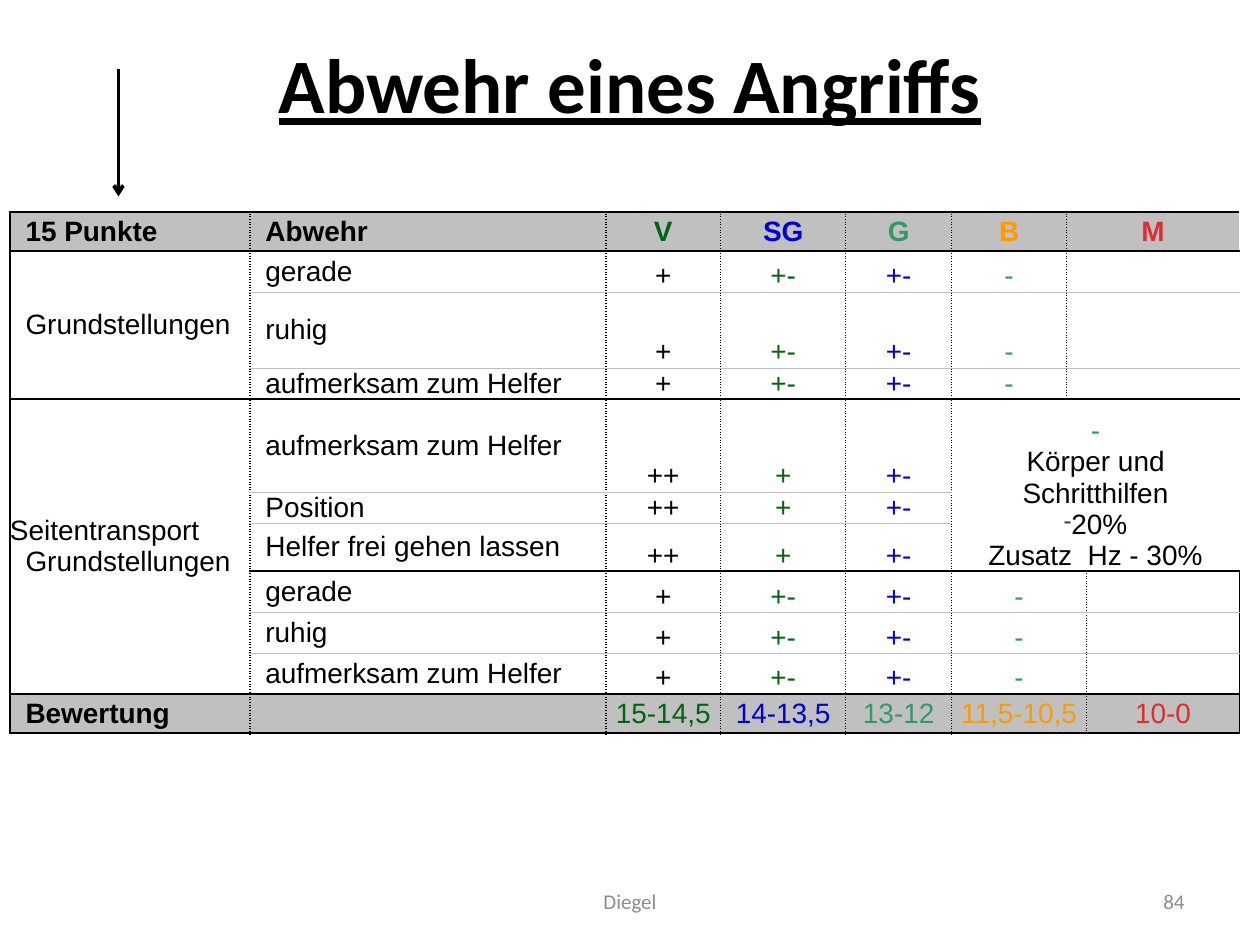
"""Builds the slide with the grading table for the defence exercise."""
from dataclasses import dataclass

from lxml.etree import SubElement
from pptx import Presentation
from pptx.dml.color import RGBColor as RGB
from pptx.enum.shapes import MSO_CONNECTOR as Conn
from pptx.enum.text import MSO_ANCHOR as Anchor, PP_ALIGN as Align
from pptx.oxml.ns import qn
from pptx.util import Pt


@dataclass(frozen=True)
class Theme:
    black: str = "000000"
    grey: str = "C0C0C0"
    muted: str = "8C8C8C"
    bullet: str = "414141"
    grades: tuple = ("006411", "0000D4", "339966", "FF9900", "DD2D32")
    table_font: str = "Arial"
    text_font: str = "Calibri"
    title_size: int = 44
    table_size: int = 16
    footer_size: int = 12


@dataclass(frozen=True)
class Line:
    text: str
    indent: float = 0
    bullet: str = ""
    color: str = ""


@dataclass(frozen=True)
class Cell:
    row: int
    col: int
    lines: tuple = ()
    color: str = "000000"
    align: Align = Align.CENTER
    anchor: Anchor = Anchor.BOTTOM
    bold: bool = False
    rows: int = 1
    cols: int = 1


@dataclass(frozen=True)
class Label:
    text: str
    box: tuple
    size: int
    color: str
    align: Align
    strong: bool = False


THEME = Theme()
INDENT = 8.9
COLS = (137.1, 203.4, 65.7, 71.4, 60.6, 65.7, 11.4, 87.4)
ROWS = (22.3, 23.4, 43.4, 17.7, 53.1, 17.7, 27.5, 23.4, 23.4, 23.4, 22.3)
SHADED = (0, 10)
GROUP_ENDS = (0, 3, 6, 9, 10)
SPLIT_ROW = 7
BASIC = ("+", "+-", "+-", "-")
ESCORT = ("++", "+", "+-")
CRITERIA = (
    ("gerade", BASIC),
    ("ruhig", BASIC),
    ("aufmerksam zum Helfer", BASIC),
    ("aufmerksam zum Helfer", ESCORT),
    ("Position", ESCORT),
    ("Helfer frei gehen lassen", ESCORT),
    ("gerade", BASIC),
    ("ruhig", BASIC),
    ("aufmerksam zum Helfer", BASIC),
)
HEADINGS = ("V", "SG", "G", "B", "M")
SCORES = ("15-14,5", "14-13,5", "13-12", "11,5-10,5", "10-0")
LABELS = (
    Label("Abwehr eines Angriffs", (0, 16.5, 720, 62), THEME.title_size,
          THEME.black, Align.CENTER, True),
    Label("84", (516, 500.5, 168, 28.5), THEME.footer_size, THEME.muted, Align.RIGHT),
    Label("Diegel", (246, 500.5, 228, 28.5), THEME.footer_size, THEME.muted, Align.CENTER),
)


def left_cell(row: int, col: int, *lines: Line, bold: bool = False, rows: int = 1) -> Cell:
    return Cell(row, col, lines, THEME.black, Align.LEFT, Anchor.MIDDLE, bold, rows)


def grade_place(row: int, index: int) -> tuple[int, int]:
    """Returns the first column and the column span of a grade."""
    if index < 3:
        return index + 2, 1
    if row < SPLIT_ROW:
        return (5, 1) if index == 3 else (6, 2)
    return (5, 2) if index == 3 else (7, 1)


def grade_cells(row: int, texts: tuple, colors: tuple, **style) -> list[Cell]:
    cells = []
    for i, (text, color) in enumerate(zip(texts, colors)):
        col, span = grade_place(row, i)
        lines = (Line(text),) if text else ()
        cells.append(Cell(row, col, lines, color, cols=span, **style))
    return cells


def table_cells() -> list[Cell]:
    cells = [
        left_cell(0, 0, Line("15 Punkte", INDENT), bold=True),
        left_cell(0, 1, Line("Abwehr", INDENT), bold=True),
        left_cell(1, 0, Line("Grundstellungen", INDENT), rows=3),
        left_cell(4, 0, Line("Seitentransport"), Line("Grundstellungen", INDENT), rows=6),
        Cell(4, 5, (Line("-", color=THEME.grades[2]), Line("Körper und Schritthilfen"),
                    Line("20%", bullet="-"), Line("Zusatz  Hz - 30%")), rows=3, cols=3),
        left_cell(10, 0, Line("Bewertung", INDENT), bold=True),
        left_cell(10, 1),
    ]
    cells += grade_cells(0, HEADINGS, THEME.grades, anchor=Anchor.MIDDLE, bold=True)
    cells += grade_cells(10, SCORES, THEME.grades, anchor=Anchor.MIDDLE)
    marks = (THEME.black, *THEME.grades[:3], THEME.black)
    for row, (name, values) in enumerate(CRITERIA, 1):
        cells.append(left_cell(row, 1, Line(name, INDENT)))
        texts = values if values is ESCORT else (*values, "")
        cells += grade_cells(row, texts, marks)
    return cells


def add_border(tc_pr, tag: str, color: str, width: float, dash: str) -> None:
    ln = SubElement(tc_pr, qn(f"a:{tag}"), w=str(Pt(width)))
    fill = SubElement(ln, qn("a:solidFill"))
    SubElement(fill, qn("a:srgbClr"), val=color)
    SubElement(ln, qn("a:prstDash"), val=dash)


def draw_borders(tc, row: int, col: int, cell: Cell) -> None:
    """Draws the outer edges of a cell block that touch this grid cell."""
    def rule(after: int) -> tuple:
        strong = after < 0 or after in GROUP_ENDS
        return (THEME.black, 1, "solid") if strong else (THEME.grey, 0.25, "solid")

    def upright(edge: int) -> tuple:
        return THEME.black, 1, "solid" if edge in (0, len(COLS)) else "sysDot"

    tc_pr = tc.get_or_add_tcPr()
    last_row, end_col = cell.row + cell.rows - 1, cell.col + cell.cols
    if col == cell.col:
        add_border(tc_pr, "lnL", *upright(col))
    if col + 1 == end_col:
        add_border(tc_pr, "lnR", *upright(end_col))
    if row == cell.row:
        add_border(tc_pr, "lnT", *rule(row - 1))
    if row == last_row:
        add_border(tc_pr, "lnB", *rule(last_row))


def write_line(p, line: Line, cell: Cell) -> None:
    p.alignment = cell.align
    p_pr = p._p.get_or_add_pPr()
    p_pr.set("marL", str(Pt(line.indent)))
    p_pr.set("indent", "0")
    if line.bullet:
        clr = SubElement(p_pr, qn("a:buClr"))
        SubElement(clr, qn("a:srgbClr"), val=THEME.bullet)
        SubElement(p_pr, qn("a:buSzPct"), val="81000")
        SubElement(p_pr, qn("a:buChar"), char=line.bullet)
    if line.text:
        p.add_run().text = line.text
    else:
        SubElement(p._p, qn("a:endParaRPr"), sz=str(THEME.table_size * 100))
    p.font.name, p.font.size, p.font.bold = THEME.table_font, Pt(THEME.table_size), cell.bold
    p.font.color.rgb = RGB.from_string(line.color or cell.color)


def draw_cell(table, cell: Cell) -> None:
    first = table.cell(cell.row, cell.col)
    if cell.rows * cell.cols > 1:
        first.merge(table.cell(cell.row + cell.rows - 1, cell.col + cell.cols - 1))
    for row in range(cell.row, cell.row + cell.rows):
        for col in range(cell.col, cell.col + cell.cols):
            part = table.cell(row, col)
            draw_borders(part._tc, row, col, cell)
            part.margin_left = part.margin_right = part.margin_top = part.margin_bottom = 0
            part.vertical_anchor = cell.anchor
            if row in SHADED:
                part.fill.solid()
                part.fill.fore_color.rgb = RGB.from_string(THEME.grey)
            else:
                part.fill.background()
            tf = part.text_frame
            lines = cell.lines if part._tc is first._tc else ()
            for i, line in enumerate(lines or (Line(""),)):
                write_line(tf.add_paragraph() if i else tf.paragraphs[0], line, cell)


def draw_table(s) -> None:
    table = s.shapes.add_table(len(ROWS), len(COLS), Pt(5.7), Pt(121.1),
                               Pt(sum(COLS)), Pt(sum(ROWS))).table
    table.first_row = table.horz_banding = False
    for column, width in zip(table.columns, COLS):
        column.width = Pt(width)
    for row, height in zip(table.rows, ROWS):
        row.height = Pt(height)
    for cell in table_cells():
        draw_cell(table, cell)


def draw_label(s, label: Label) -> None:
    tf = s.shapes.add_textbox(*map(Pt, label.box)).text_frame
    tf.word_wrap, tf.vertical_anchor = True, Anchor.MIDDLE
    p = tf.paragraphs[0]
    p.text, p.alignment = label.text, label.align
    p.font.name, p.font.size = THEME.text_font, Pt(label.size)
    p.font.bold = p.font.underline = label.strong
    p.font.color.rgb = RGB.from_string(label.color)


def draw_arrow(s) -> None:
    sp = s.shapes.add_connector(Conn.STRAIGHT, Pt(67.7), Pt(39.6), Pt(67.7), Pt(112.3))
    sp.line.width = Pt(2)
    sp.line.color.rgb = RGB.from_string(THEME.black)
    SubElement(sp.line._get_or_add_ln(), qn("a:tailEnd"), type="arrow")
    SubElement(sp._element.spPr, qn("a:effectLst"))


def main() -> None:
    prs = Presentation()
    prs.slide_width, prs.slide_height = Pt(720), Pt(540)
    s = prs.slides.add_slide(prs.slide_layouts[6])
    draw_table(s)
    draw_arrow(s)
    for label in LABELS:
        draw_label(s, label)
    prs.save("out.pptx")


if __name__ == "__main__":
    main()
